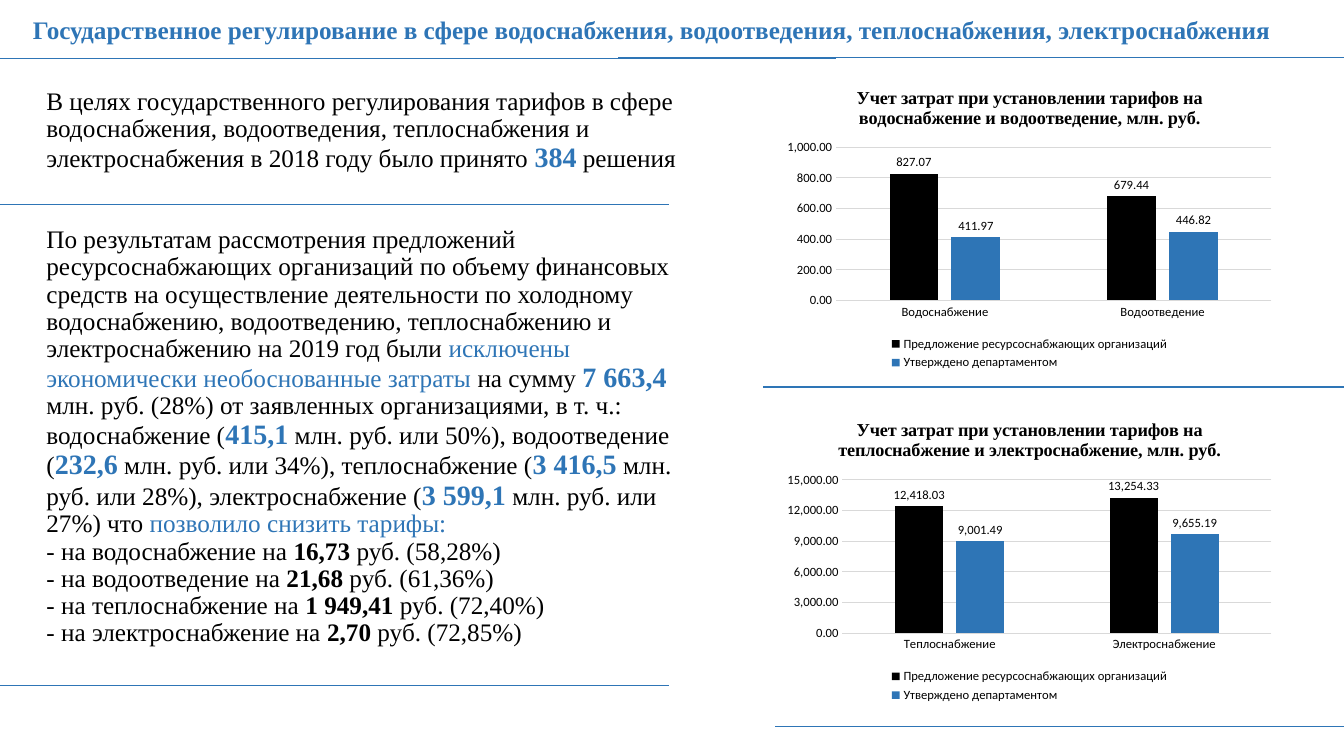
from lxml import etree
from pptx import Presentation
from pptx import util as u
from pptx.chart import data as chart_data
from pptx.dml import color
from pptx.enum import chart as chart_enum
from pptx.enum import shapes, text
from pptx.oxml import ns

Inches = u.Inches
COLOURS = {"blue": "2E75B6", "black": "000000", "grid": "D9D9D9"}
SERIF, SANS = "Times New Roman", "Calibri"
STYLES = {
    "plain": {"size": 18, "colour": "black", "bold": False},
    "accent": {"size": 18, "colour": "blue", "bold": False},
    "strong": {"size": 18, "colour": "black", "bold": True},
    "heading": {"size": 18, "colour": "blue", "bold": True},
    "figure": {"size": 20, "colour": "blue", "bold": True},
}
LINES = [
    (0, 0.58, 8.29, 0.58), (0, 2.03, 6.64, 2.03), (0, 6.8, 6.64, 6.8),
    (6.13, 0.57, 13.33, 0.57), (7.57, 3.84, 13.33, 3.84), (7.69, 7.21, 13.33, 7.21),
]
TITLE = [[("Государственное регулирование в сфере водоснабжения, водоотведения, "
           "теплоснабжения, электроснабжения", "heading")]]
DECISIONS = [[
    ("В целях государственного регулирования тарифов в сфере водоснабжения, водоотведения, "
     "теплоснабжения и электроснабжения в 2018 году было принято ", "plain"),
    ("384", "figure"),
    (" решения", "plain"),
]]
RESULTS = [
    ("По результатам рассмотрения предложений ресурсоснабжающих организаций по объему "
     "финансовых средств на осуществление деятельности по холодному водоснабжению, "
     "водоотведению, теплоснабжению и электроснабжению на 2019 год были ", "plain"),
    ("исключены экономически необоснованные затраты ", "accent"),
    ("на сумму ", "plain"),
    ("7 663,4", "figure"),
    (" млн. руб. (28%) от заявленных организациями, в т. ч.: водоснабжение (", "plain"),
    ("415,1", "figure"),
    (" млн. руб. или 50%), водоотведение (", "plain"),
    ("232,6", "figure"),
    (" млн. руб. или 34%), теплоснабжение (", "plain"),
    ("3 416,5", "figure"),
    (" млн. руб. или 28%), электроснабжение (", "plain"),
    ("3 599,1", "figure"),
    (" млн. руб. или 27%) что ", "plain"),
    ("позволило снизить тарифы:", "accent"),
]
REDUCTIONS = [
    ("водоснабжение", "16,73", "58,28%"),
    ("водоотведение", "21,68", "61,36%"),
    ("теплоснабжение", "1 949,41", "72,40%"),
    ("электроснабжение", "2,70", "72,85%"),
]
SERIES = [("Предложение ресурсоснабжающих организаций", "black"),
          ("Утверждено департаментом", "blue")]
CHARTS = [
    {"top": 0.71, "maximum": 1000, "step": 200,
     "title": "Учет затрат при установлении тарифов на водоснабжение и водоотведение, млн. руб.",
     "categories": ["Водоснабжение", "Водоотведение"],
     "values": [(827.07, 679.44), (411.97, 446.82)]},
    {"top": 4.01, "maximum": 15000, "step": 3000,
     "title": "Учет затрат при установлении тарифов на теплоснабжение и электроснабжение, млн. руб.",
     "categories": ["Теплоснабжение", "Электроснабжение"],
     "values": [(12418.03, 13254.33), (9001.49, 9655.19)]},
]


def set_all(target, values):
    for name, value in values.items():
        setattr(target, name, value)


def rgb(name):
    return color.RGBColor.from_string(COLOURS[name])


def format_font(font, name, size, colour="black", bold=False):
    set_all(font, {"name": name, "size": u.Pt(size), "bold": bold})
    font.color.rgb = rgb(colour)


def format_line(line, colour, width):
    line.color.rgb = rgb(colour)
    line.width = u.Pt(width)


def fill_placeholder(shape, box, paragraphs, frame_format, paragraph_format):
    set_all(shape, dict(zip(("left", "top", "width", "height"), map(Inches, box))))
    frame = shape.text_frame
    set_all(frame, {"word_wrap": True, "auto_size": text.MSO_AUTO_SIZE.NONE, **frame_format})
    for index, runs in enumerate(paragraphs):
        paragraph = frame.add_paragraph() if index else frame.paragraphs[0]
        set_all(paragraph, {"space_before": u.Pt(0), "space_after": u.Pt(0), **paragraph_format})
        properties = paragraph._p.get_or_add_pPr()
        properties.set("marL", "0")
        properties.set("indent", "0")
        etree.SubElement(properties, ns.qn("a:buNone"))
        for words, style in runs:
            run = paragraph.add_run()
            run.text = words
            format_font(run.font, SERIF, **STYLES[style])


def add_rule(slide, ends):
    connector = slide.shapes.add_connector(
        shapes.MSO_CONNECTOR.STRAIGHT, *map(Inches, ends))
    format_line(connector.line, "blue", 1)
    etree.SubElement(connector._element.spPr, ns.qn("a:effectLst"))


def add_cost_chart(slide, details):
    data = chart_data.CategoryChartData(number_format="#,##0.00")
    data.categories = details["categories"]
    for (name, _), values in zip(SERIES, details["values"]):
        data.add_series(name, values)
    chart = slide.shapes.add_chart(
        chart_enum.XL_CHART_TYPE.COLUMN_CLUSTERED, Inches(7.71), Inches(details["top"]),
        Inches(5), Inches(3), data).chart
    format_font(chart.font, SANS, 10)

    title = chart.chart_title.text_frame
    title.text = details["title"]
    format_font(title.paragraphs[0].runs[0].font, SERIF, 13, bold=True)
    chart.chart_title.include_in_layout = False

    chart.has_legend = True
    set_all(chart.legend, {"position": chart_enum.XL_LEGEND_POSITION.BOTTOM,
                           "include_in_layout": False})
    format_font(chart.legend.font, SANS, 9)

    for axis in (chart.category_axis, chart.value_axis):
        set_all(axis, {"major_tick_mark": chart_enum.XL_TICK_MARK.NONE,
                       "minor_tick_mark": chart_enum.XL_TICK_MARK.NONE})
        format_font(axis.tick_labels.font, SANS, 9)
    format_line(chart.category_axis.format.line, "grid", 0.75)
    value_axis = chart.value_axis
    set_all(value_axis, {"minimum_scale": 0, "maximum_scale": details["maximum"],
                         "major_unit": details["step"], "has_major_gridlines": True})
    value_axis.format.line.fill.background()
    format_line(value_axis.major_gridlines.format.line, "grid", 0.75)
    number_format = {"number_format": "#,##0.00", "number_format_is_linked": False}
    set_all(value_axis.tick_labels, number_format)

    plot = chart.plots[0]
    set_all(plot, {"gap_width": 219, "overlap": -27, "vary_by_categories": False})
    for series, (_, colour) in zip(plot.series, SERIES):
        series.format.fill.solid()
        series.format.fill.fore_color.rgb = rgb(colour)
        labels = series.data_labels
        set_all(labels, {"show_value": True,
                         "position": chart_enum.XL_LABEL_POSITION.OUTSIDE_END,
                         **number_format})
        format_font(labels.font, SANS, 9)


def main():
    presentation = Presentation()
    set_all(presentation, {"slide_width": Inches(13.33), "slide_height": Inches(7.5)})
    slide = presentation.slides.add_slide(presentation.slide_layouts.get_by_name("Two Content"))
    title, decisions, results = slide.placeholders

    fill_placeholder(
        title, (0.22, 0.09, 12.49, 0.4), TITLE,
        {"margin_left": Inches(0.05), "margin_right": Inches(0.05),
         "vertical_anchor": text.MSO_ANCHOR.MIDDLE},
        {"alignment": text.PP_ALIGN.CENTER})
    sides = ("left", "top", "right", "bottom")
    body_frame = {f"margin_{side}": Inches(0.07) for side in sides}
    body_frame["vertical_anchor"] = text.MSO_ANCHOR.TOP
    body_paragraph = {"line_spacing": 0.9, "alignment": text.PP_ALIGN.LEFT}
    reductions = [
        [(f"- на {service} на ", "plain"), (amount, "strong"), (f" руб. ({share})", "plain")]
        for service, amount, share in REDUCTIONS]
    fill_placeholder(decisions, (0.39, 0.81, 6.51, 1.2), DECISIONS, body_frame, body_paragraph)
    fill_placeholder(results, (0.39, 2.18, 6.51, 4.4), [RESULTS, *reductions],
                     body_frame, body_paragraph)

    for ends in LINES:
        add_rule(slide, ends)
    for details in CHARTS:
        add_cost_chart(slide, details)
    presentation.save("out.pptx")


if __name__ == "__main__":
    main()
